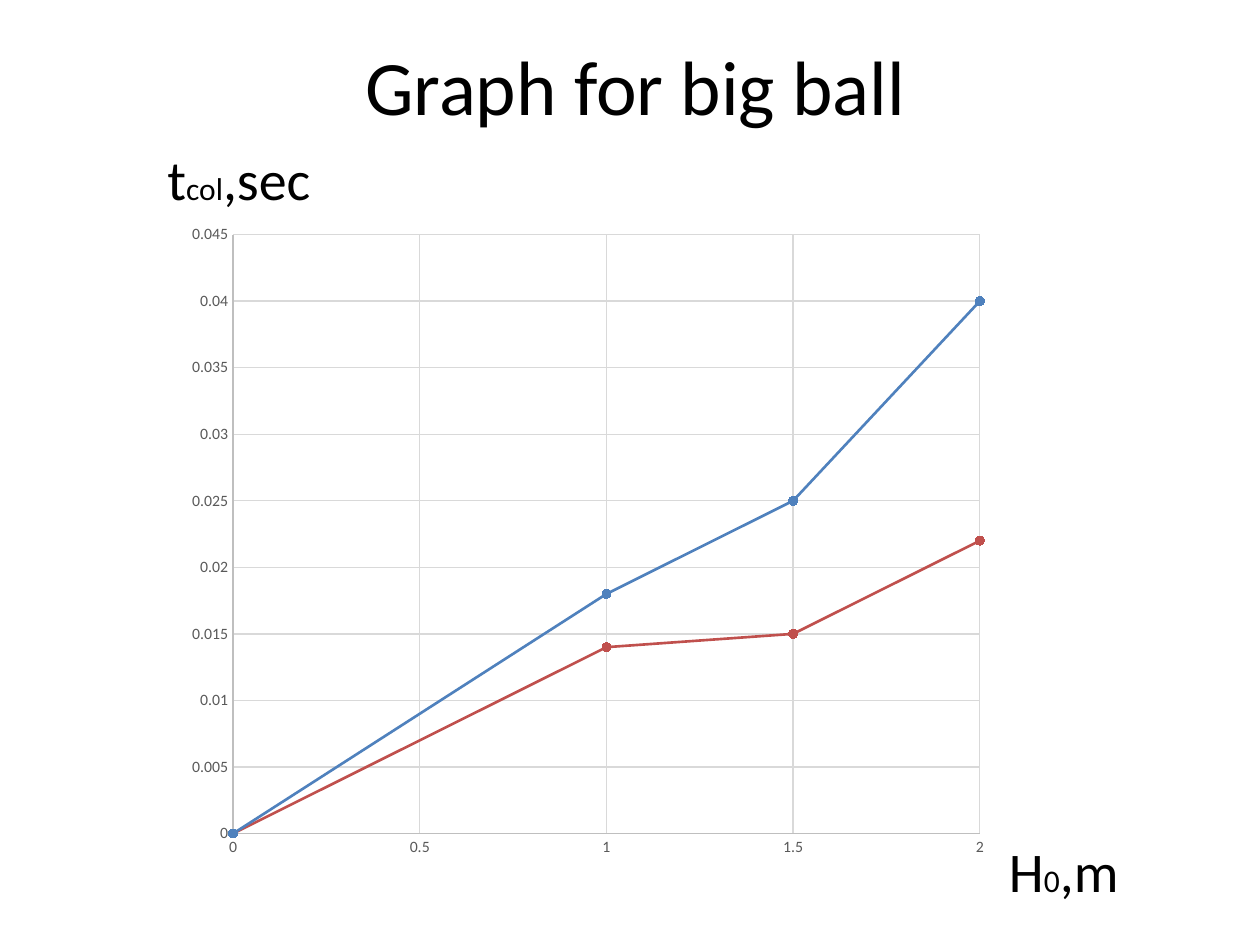
"""Build a slide with a scatter chart of collision time against drop height."""
import pptx
import pptx.chart.data
import pptx.dml.color
import pptx.enum.chart
import pptx.enum.text
import pptx.oxml
import pptx.oxml.ns
import pptx.util

Inches, Pt = pptx.util.Inches, pptx.util.Pt
COLORS = {"text": "000000", "tick": "595959", "axis": "BFBFBF", "grid": "D9D9D9",
          "blue": "4F81BD", "red": "C0504D"}
FONT = "Calibri"
HEIGHTS = (0, 1, 1.5, 2)
SERIES = (("Series 1", (0, 0.018, 0.025, 0.04), "blue"),
          ("Series 2", (0, 0.014, 0.015, 0.022), "red"))
PLOT = {"x": 0.086, "y": 0.038, "w": 0.894, "h": 0.892}


def rgb(name):
    """Return the named colour."""
    return pptx.dml.color.RGBColor.from_string(COLORS[name])


def set_font(font, size, color="text"):
    """Set typeface, size and colour of a font."""
    font.name, font.size = FONT, Pt(size)
    font.color.rgb = rgb(color)


def set_line(line, color, width):
    """Set colour and width of a line."""
    line.color.rgb = rgb(color)
    line.width = Pt(width)


def add_title(s, text, box):
    """Place and format the title placeholder."""
    sp = s.shapes.title
    sp.left, sp.top, sp.width, sp.height = map(Inches, box)
    p = sp.text_frame.paragraphs[0]
    p.text = text
    p.alignment = pptx.enum.text.PP_ALIGN.CENTER
    set_font(p.font, 44)


def add_axis_label(s, symbol, index, unit, box):
    """Add an axis label whose index is set in smaller type."""
    tf = s.shapes.add_textbox(*map(Inches, box)).text_frame
    tf.word_wrap = True
    p = tf.paragraphs[0]
    set_font(p.font, 32)
    for text, size in ((symbol, 32), (index, 18), (unit, 32)):
        r = p.add_run()
        r.text = text
        r.font.size = Pt(size)


def format_axis(axis, maximum, step):
    """Set scale, lines and tick labels of an axis."""
    axis.minimum_scale, axis.maximum_scale, axis.major_unit = 0, maximum, step
    axis.major_tick_mark = axis.minor_tick_mark = pptx.enum.chart.XL_TICK_MARK.NONE
    axis.has_major_gridlines = True
    set_line(axis.major_gridlines.format.line, "grid", 0.75)
    set_line(axis.format.line, "axis", 0.75)
    set_font(axis.tick_labels.font, 9, "tick")
    axis.tick_labels.number_format = "General"
    axis.tick_labels.number_format_is_linked = False


def format_series(series, color):
    """Draw a series with straight lines and round markers."""
    series.smooth = False
    set_line(series.format.line, color, 1.5)
    marker = series.marker
    marker.style, marker.size = pptx.enum.chart.XL_MARKER_STYLE.CIRCLE, 5
    marker.format.fill.solid()
    marker.format.fill.fore_color.rgb = rgb(color)
    set_line(marker.format.line, color, 0.75)


def set_plot_layout(chart):
    """Fix the inner plot area as fractions of the chart."""
    area = chart._chartSpace.chart.plotArea
    for old in area.findall(pptx.oxml.ns.qn("c:layout")):
        area.remove(old)
    modes = "".join(f'<c:{k}Mode val="edge"/>' for k in "xy")
    sizes = "".join(f'<c:{k} val="{v}"/>' for k, v in PLOT.items())
    area.insert(0, pptx.oxml.parse_xml(
        f'<c:layout {pptx.oxml.ns.nsdecls("c")}><c:manualLayout>'
        f'<c:layoutTarget val="inner"/>{modes}{sizes}</c:manualLayout></c:layout>'))


def add_scatter(s, box):
    """Add the scatter chart."""
    data = pptx.chart.data.XyChartData()
    for name, times, _ in SERIES:
        series = data.add_series(name)
        for height, time in zip(HEIGHTS, times):
            series.add_data_point(height, time)
    kind = pptx.enum.chart.XL_CHART_TYPE.XY_SCATTER_LINES
    chart = s.shapes.add_chart(kind, *map(Inches, box), data).chart
    chart.has_legend = chart.has_title = False
    chart.font.name, chart.font.size = "Arial", Pt(10)
    chart.font.color.rgb = rgb("text")
    chart.plots[0].vary_by_categories = False
    format_axis(chart.category_axis, 2, 0.5)
    format_axis(chart.value_axis, 0.045, 0.005)
    for series, (_, _, color) in zip(chart.plots[0].series, SERIES):
        format_series(series, color)
    set_plot_layout(chart)


def main():
    """Build and save the slide."""
    prs = pptx.Presentation()
    prs.slide_width, prs.slide_height = Inches(10), Inches(7.5)
    s = prs.slides.add_slide(prs.slide_layouts[5])
    add_title(s, "Graph for big ball", (2.72, 0.26, 4.65, 0.83))
    add_scatter(s, (1.28, 1.66, 6.63, 5.33))
    add_axis_label(s, "t", "col", ",sec", (1.23, 1.1, 1.4, 0.63))
    add_axis_label(s, "H", "0", ",m", (7.91, 6.59, 1.57, 0.63))
    prs.save("out.pptx")


if __name__ == "__main__":
    main()
